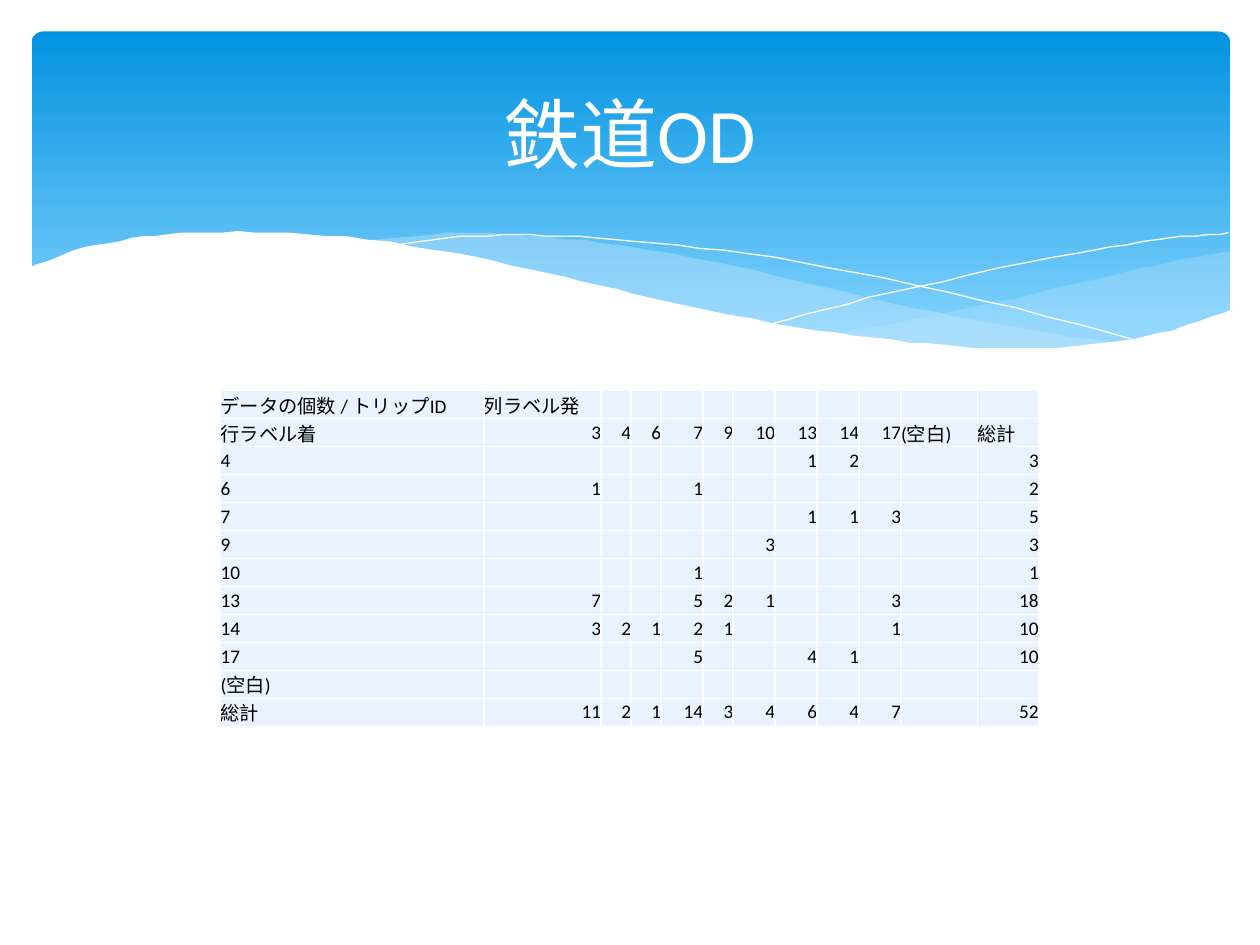
from lxml.etree import SubElement
from pptx import Presentation
from pptx.dml.color import RGBColor
from pptx.enum.shapes import MSO_SHAPE as SHAPE
from pptx.enum.text import MSO_ANCHOR as ANCHOR, PP_ALIGN as ALIGN
from pptx.oxml.ns import qn
from pptx.util import Pt

COLORS = {"sky": "0293E0", "pale_sky": "83D3FE", "mist": "C6E7FC",
          "white": "FFFFFF", "cell": "E8F3FF", "ink": "000000"}
FONT = "Calibri"

# Wave edges, in points from the banner's top left corner
RIGHT_WAVE_TOP = [(684.7, 126), (664.6, 128.9), (634.3, 135.4), (601.9, 142.6),
                  (561.6, 152.6), (506.9, 164.2), (457.9, 172.8)]
RIGHT_WAVE_BOTTOM = [(457.9, 172.8), (489.6, 177.1), (527, 180.7), (560.2, 182.2),
                     (596.9, 180.7), (627.8, 176.4), (655.2, 170.6), (684.7, 159.8)]
LONG_WAVE_TOP = [(625, 178.6), (584.6, 172.8), (540, 164.9), (490.3, 154.8),
                 (434.9, 141.8), (391.7, 131.8), (352.1, 124.6), (316.8, 119.5),
                 (284.4, 116.6), (255.6, 115.2), (229.7, 115.9), (187.9, 119.5)]
LONG_WAVE_BOTTOM = [(187.9, 119.5), (228.2, 125.3), (272.9, 133.9), (305.3, 141.8),
                    (363.6, 154.8), (414.7, 165.6), (460.8, 173.5), (501.8, 179.3),
                    (538.6, 181.4), (571, 182.2), (599, 181.4), (625, 178.6)]
FALLING_LINE = [(204.5, 122.4), (229.7, 118.8), (260.6, 116.6), (293.8, 116.6),
                (334.1, 118.8), (382.3, 123.8), (439.9, 131.8), (505.4, 144.7),
                (580.3, 162.7), (635, 177.8)]
RISING_LINE = [(423.4, 167), (465.8, 155.5), (520.6, 142.6), (583.9, 128.9),
               (626.4, 121.7), (657.4, 117.4), (684, 115.2)]
FRONT_WAVE_TOP = [(685.4, 159.1), (658.8, 168.5), (629.3, 175.7), (594, 180),
                  (564.5, 181.4), (529.9, 180), (491.8, 176.4), (448.6, 170.6),
                  (398.9, 162), (344.2, 149.8), (303.8, 140.4), (244.8, 127.4),
                  (192.2, 118.8), (147.6, 115.2), (109.4, 114.5), (77, 115.9),
                  (50.4, 119.5), (24.5, 125.3), (-1.4, 135.4)]
FRONT_WAVE_BASE = [(-1.4, 218.9), (685.4, 218.9)]

# Trips by arrival (rows) and departure (columns)
COLUMN_WIDTHS = [150.5, 67, 17.2, 17.2, 24, 17.2, 24, 24, 24, 24, 43.7, 35]
OD_ROWS = [
    ["データの個数 / トリップID", "列ラベル発"] + [""] * 10,
    ["行ラベル着", 3, 4, 6, 7, 9, 10, 13, 14, 17, "(空白)", "総計"],
    ["4", "", "", "", "", "", "", 1, 2, "", "", 3],
    ["6", 1, "", "", 1, "", "", "", "", "", "", 2],
    ["7", "", "", "", "", "", "", 1, 1, 3, "", 5],
    ["9", "", "", "", "", "", 3, "", "", "", "", 3],
    ["10", "", "", "", 1, "", "", "", "", "", "", 1],
    ["13", 7, "", "", 5, 2, 1, "", "", 3, "", 18],
    ["14", 3, 2, 1, 2, 1, "", "", "", 1, "", 10],
    ["17", "", "", "", 5, "", "", 4, 1, "", "", 10],
    ["(空白)"] + [""] * 11,
    ["総計", 11, 2, 1, 14, 3, 4, 6, 4, 7, "", 52],
]


def rgb(name):
    return RGBColor.from_string(COLORS[name])


def smooth(knots, steps=4):
    """Catmull-Rom curve through the knots."""
    padded = [knots[0], *knots, knots[-1]]
    curve = [knots[0]]
    for a, b, c, d in zip(padded, padded[1:], padded[2:], padded[3:]):
        for step in range(1, steps + 1):
            t = step / steps
            curve.append(tuple(
                (2 * q + (r - p) * t + (2 * p - 5 * q + 4 * r - s) * t ** 2
                 + (3 * q - p - 3 * r + s) * t ** 3) / 2
                for p, q, r, s in zip(a, b, c, d)))
    return curve


def add_outline(slide, left, top, points, close):
    start, *rest = [(left + x, top + y) for x, y in points]
    builder = slide.shapes.build_freeform(*start, scale=Pt(1))
    builder.add_line_segments(rest, close=close)
    outline = builder.convert_to_shape()
    outline.shadow.inherit = False
    return outline


def add_wave(slide, left, top, points, color, opacity=100):
    wave = add_outline(slide, left, top, points, True)
    wave.line.fill.background()
    wave.fill.solid()
    wave.fill.fore_color.rgb = rgb(color)
    if opacity < 100:
        tint = wave.fill._xPr.find(qn("a:solidFill"))[0]
        SubElement(tint, qn("a:alpha"), val=str(opacity * 1000))


def add_banner(slide, left, top, width, height):
    # Gradient panel
    panel = slide.shapes.add_shape(SHAPE.ROUNDED_RECTANGLE, Pt(left), Pt(top),
                                   Pt(width), Pt(height))
    panel.adjustments[0] = 0.034
    panel.shadow.inherit = False
    panel.line.fill.background()
    panel.fill.gradient()
    panel.fill.gradient_angle = 270
    for stop, color, position in zip(panel.fill.gradient_stops,
                                     ("sky", "pale_sky"), (0, 0.9)):
        stop.color.rgb = rgb(color)
        stop.position = position

    # Translucent waves, thin lines, then the white wave in front
    add_wave(slide, left, top,
             smooth(RIGHT_WAVE_TOP) + smooth(RIGHT_WAVE_BOTTOM), "mist", 29)
    add_wave(slide, left, top,
             smooth(LONG_WAVE_TOP) + smooth(LONG_WAVE_BOTTOM), "mist", 40)
    for knots in (FALLING_LINE, RISING_LINE):
        curve = add_outline(slide, left, top, smooth(knots), False)
        curve.fill.background()
        curve.line.color.rgb = rgb("white")
        curve.line.width = Pt(0)
    add_wave(slide, left, top, smooth(FRONT_WAVE_TOP) + FRONT_WAVE_BASE, "white")


def add_title(slide, left, top, width, height):
    frame = slide.shapes.add_textbox(Pt(left), Pt(top), Pt(width), Pt(height)).text_frame
    frame.word_wrap = True
    frame.vertical_anchor = ANCHOR.MIDDLE
    frame.text = "鉄道OD"
    heading = frame.paragraphs[0]
    heading.alignment = ALIGN.CENTER
    font = heading.runs[0].font
    font.name, font.size = FONT, Pt(44)
    font.color.rgb = rgb("white")


def fill_cell(cell, value):
    cell.margin_left = cell.margin_right = cell.margin_top = cell.margin_bottom = 0
    cell.vertical_anchor = ANCHOR.MIDDLE
    # Borders come before the fill in the cell's properties
    for side in ("a:lnL", "a:lnR", "a:lnT", "a:lnB"):
        border = SubElement(cell._tc.get_or_add_tcPr(), qn(side), w=str(Pt(1)))
        paint = SubElement(border, qn("a:solidFill"))
        SubElement(paint, qn("a:srgbClr"), val=COLORS["white"])
    cell.fill.solid()
    cell.fill.fore_color.rgb = rgb("cell")

    cell.text = str(value)
    entry = cell.text_frame.paragraphs[0]
    if isinstance(value, int):
        entry.alignment = ALIGN.RIGHT
    for run in entry.runs:
        run.font.name, run.font.size = FONT, Pt(11)
        run.font.color.rgb = rgb("ink")
    if not entry.runs:  # keeps empty cells from stretching the row
        SubElement(entry._p, qn("a:endParaRPr"), sz="1100")


def add_od_table(slide, left, top, width, height):
    table = slide.shapes.add_table(len(OD_ROWS), len(COLUMN_WIDTHS), Pt(left), Pt(top),
                                   Pt(width), Pt(height)).table
    table.first_row = table.horz_banding = False
    for column, column_width in zip(table.columns, COLUMN_WIDTHS):
        column.width = Pt(column_width)
    for row, values in zip(table.rows, OD_ROWS):
        row.height = Pt(height / len(OD_ROWS))
        for cell, value in zip(row.cells, values):
            fill_cell(cell, value)


def main():
    deck = Presentation()
    deck.slide_width, deck.slide_height = Pt(720), Pt(540)
    slide = deck.slides.add_slide(deck.slide_layouts[6])
    add_banner(slide, 18, 18, 685, 194.4)
    add_title(slide, 36, 26.6, 648, 98.6)
    add_od_table(slide, 126, 223.2, sum(COLUMN_WIDTHS), 192)
    deck.save("out.pptx")


if __name__ == "__main__":
    main()
